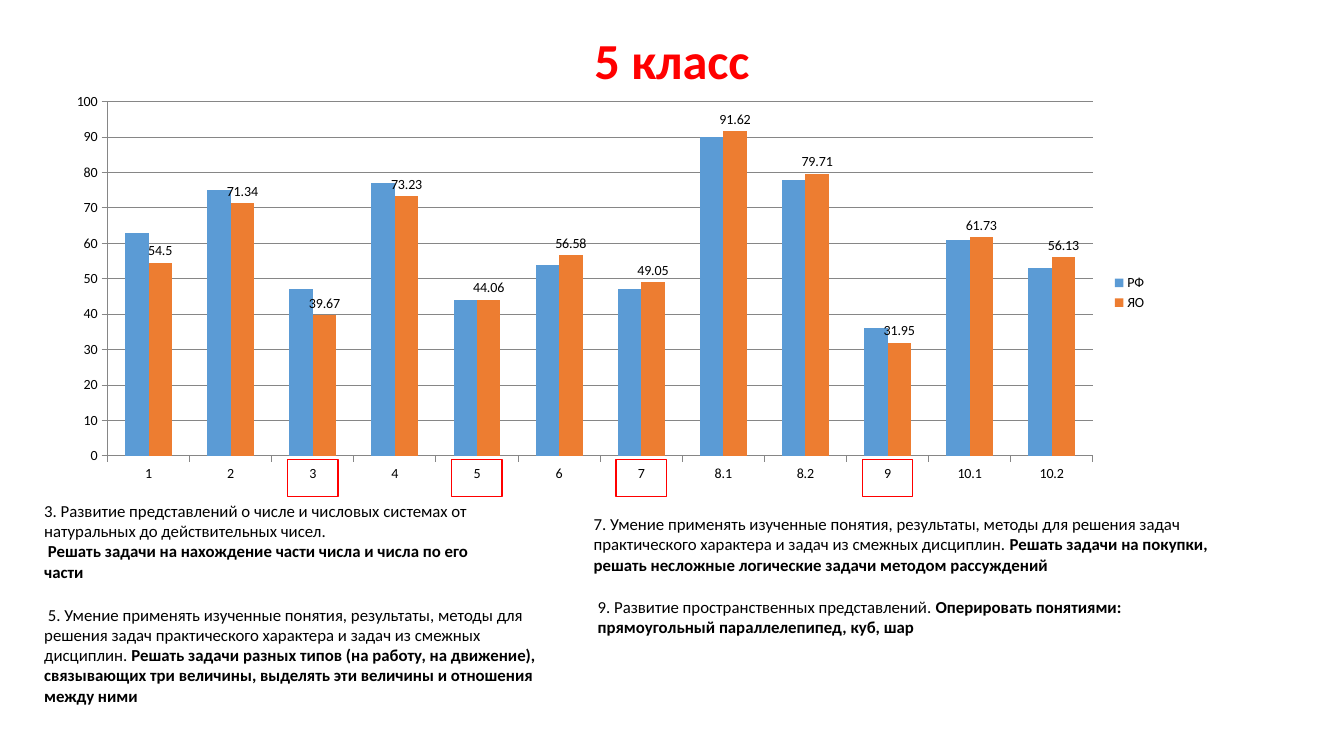
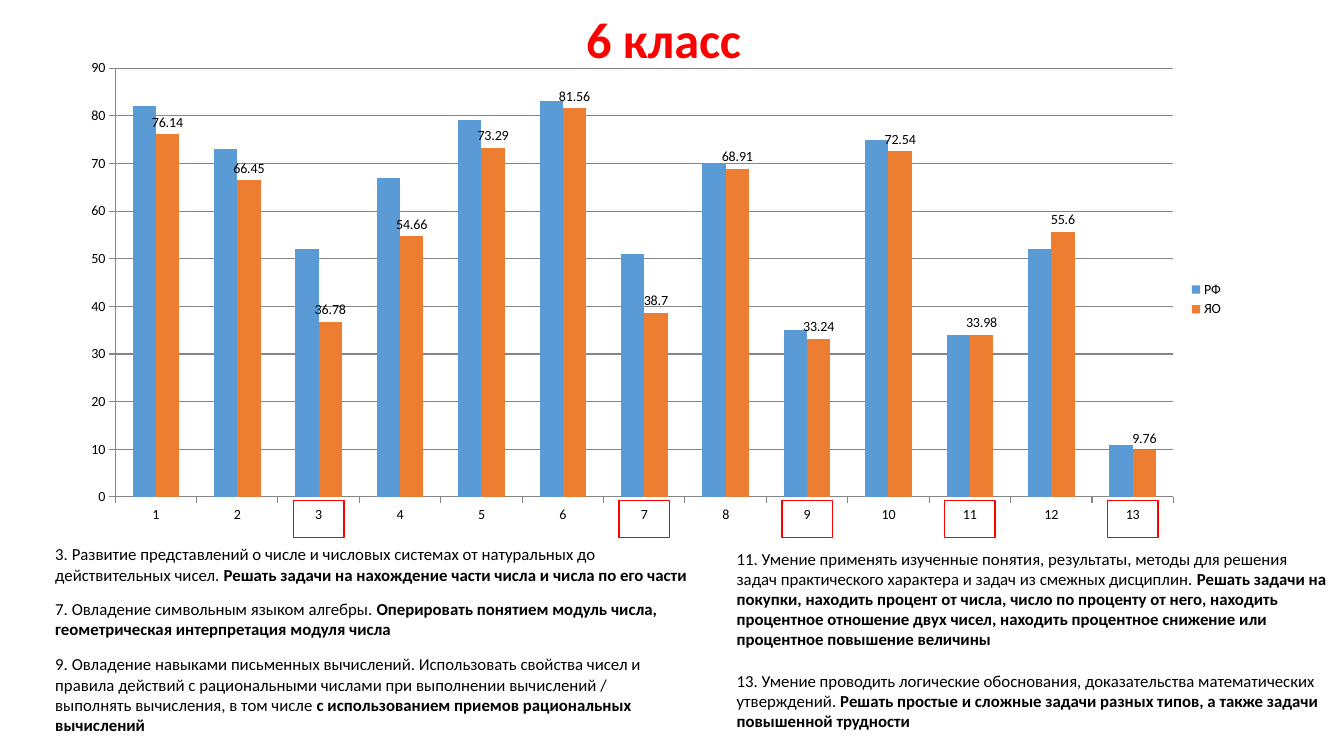
from dataclasses import dataclass

from lxml import etree
from pptx import Presentation
from pptx.chart.data import CategoryChartData
from pptx.dml.color import RGBColor
from pptx.enum.chart import XL_CHART_TYPE, XL_LABEL_POSITION, XL_LEGEND_POSITION, XL_TICK_MARK
from pptx.enum.shapes import MSO_SHAPE
from pptx.enum.text import MSO_ANCHOR, MSO_AUTO_SIZE, PP_ALIGN
from pptx.util import Pt

COLUMNS = XL_CHART_TYPE.COLUMN_CLUSTERED
LABEL_ABOVE = XL_LABEL_POSITION.OUTSIDE_END
LEGEND_RIGHT = XL_LEGEND_POSITION.RIGHT
TICK_OUT = XL_TICK_MARK.OUTSIDE
RECT = MSO_SHAPE.RECTANGLE
MIDDLE = MSO_ANCHOR.MIDDLE
FIT_SHAPE = MSO_AUTO_SIZE.SHAPE_TO_FIT_TEXT
NO_FIT = MSO_AUTO_SIZE.NONE
CENTER = PP_ALIGN.CENTER

FONT = "Calibri"
COLORS = {
    "accent": "FF0000",
    "text": "000000",
    "country": "5B9BD5",
    "region": "ED7D31",
    "grid": "868686",
}
TITLE_ONLY = 5
MARKER_W, MARKER_H, MARKER_GAP = 36, 26.6, 2.4
CHART_NS = "http://schemas.openxmlformats.org/drawingml/2006/chart"


@dataclass(frozen=True)
class Box:
    x: float
    y: float
    w: float
    h: float

    def inner(self, part: "Box") -> "Box":
        return Box(self.x + part.x * self.w, self.y + part.y * self.h,
                   part.w * self.w, part.h * self.h)

    def lengths(self) -> tuple[Pt, Pt, Pt, Pt]:
        return Pt(self.x), Pt(self.y), Pt(self.w), Pt(self.h)


@dataclass(frozen=True)
class Run:
    text: str
    bold: bool = False


@dataclass(frozen=True)
class Note:
    box: Box
    paragraphs: tuple[tuple[Run, ...], ...]


@dataclass(frozen=True)
class Grade:
    title: str
    title_box: Box
    chart_box: Box
    plot: Box
    cats: tuple[str, ...]
    country: tuple[float, ...]
    region: tuple[float, ...]
    marked: tuple[str, ...]
    notes: tuple[Note, ...]


def note(box: Box, skill: str, task: str) -> Note:
    return Note(box, ((Run(skill), Run(task, True)),))


GRADES = (
    Grade(
        "5 класс",
        Box(66, 12, 828, 66),
        Box(50.4, 67, 776, 283.7),
        Box(0.034, 0.018, 0.907, 0.894),
        ("1", "2", "3", "4", "5", "6", "7", "8.1", "8.2", "9", "10.1", "10.2"),
        (63, 75, 47, 77, 44, 54, 47, 90, 78, 36, 61, 53),
        (54.5, 71.34, 39.67, 73.23, 44.06, 56.58, 49.05, 91.62, 79.71, 31.95, 61.73, 56.13),
        ("3", "5", "7", "9"),
        (
            Note(Box(24.5, 354.2, 335.5, 65.5), (
                (Run("3. Развитие представлений о числе и числовых системах от "
                     "натуральных до действительных чисел."),),
                (Run(" "),
                 Run("Решать задачи на нахождение части числа и числа по его части", True)),
            )),
            note(Box(24.5, 428.4, 382.3, 80),
                 " 5. Умение применять изученные понятия, результаты, методы для решения задач "
                 "практического характера и задач из смежных дисциплин. ",
                 "Решать задачи разных типов (на работу, на движение), связывающих три величины, "
                 "выделять эти величины и отношения между ними"),
            note(Box(416.9, 363.6, 466.6, 51),
                 "7. Умение применять изученные понятия, результаты, методы для решения задач "
                 "практического характера и задач из смежных дисциплин. ",
                 "Решать задачи на покупки, решать несложные логические задачи методом рассуждений"),
            note(Box(419.8, 422.6, 474.5, 36),
                 "9. Развитие пространственных представлений. ",
                 "Оперировать понятиями: прямоугольный параллелепипед, куб, шар"),
        ),
    ),
    Grade(
        "6 класс",
        Box(60, 5, 828, 50.4),
        Box(53.3, 42.5, 828, 342.7),
        Box(0.035, 0.018, 0.913, 0.894),
        tuple(str(n) for n in range(1, 14)),
        (82, 73, 52, 67, 79, 83, 51, 70, 35, 75, 34, 52, 11),
        (76.14, 66.45, 36.78, 54.66, 73.29, 81.56, 38.7, 68.91, 33.24, 72.54, 33.98, 55.6, 9.76),
        ("3", "7", "9", "11", "13"),
        (
            note(Box(32.4, 385.2, 480.2, 36),
                 "3. Развитие представлений о числе и числовых системах от натуральных до "
                 "действительных чисел. ",
                 "Решать задачи на нахождение части числа и числа по его части"),
            note(Box(32.4, 424.1, 480.2, 36),
                 "7. Овладение символьным языком алгебры. ",
                 "Оперировать понятием модуль числа, геометрическая интерпретация модуля числа"),
            note(Box(32.4, 463.7, 441.4, 65.5),
                 "9. Овладение навыками письменных вычислений. Использовать свойства чисел и "
                 "правила действий с рациональными числами при выполнении вычислений / "
                 "выполнять вычисления, в том числе ",
                 "с использованием приемов рациональных вычислений"),
            note(Box(519.1, 388.1, 435.6, 80),
                 "11. Умение применять изученные понятия, результаты, методы для решения задач "
                 "практического характера и задач из смежных дисциплин. ",
                 "Решать задачи на покупки, находить процент от числа, число по проценту от него, "
                 "находить процентное отношение двух чисел, находить процентное снижение или "
                 "процентное повышение величины"),
            note(Box(519.1, 475.2, 435.6, 51),
                 "13. Умение проводить логические обоснования, доказательства математических "
                 "утверждений. ",
                 "Решать простые и сложные задачи разных типов, а также задачи повышенной трудности"),
        ),
    ),
)


def rgb(name: str) -> RGBColor:
    return RGBColor.from_string(COLORS[name])


def style_font(font, size: float, color: str = "text", bold: bool = False) -> None:
    font.name = FONT
    font.size = Pt(size)
    font.bold = bold
    font.color.rgb = rgb(color)


def add_title(slide, text: str, box: Box) -> None:
    sp = slide.shapes.title
    sp.left, sp.top, sp.width, sp.height = box.lengths()
    tf = sp.text_frame
    tf.auto_size = NO_FIT
    tf.vertical_anchor = MIDDLE
    p = tf.paragraphs[0]
    p.alignment = CENTER
    p.line_spacing = 0.9
    r = p.add_run()
    r.text = text
    style_font(r.font, 36, "accent", True)


def set_plot_layout(chart, plot: Box) -> None:
    area = chart._chartSpace.chart.plotArea
    for old in area.findall(f"{{{CHART_NS}}}layout"):
        area.remove(old)
    layout = etree.Element(f"{{{CHART_NS}}}layout")
    manual = etree.SubElement(layout, f"{{{CHART_NS}}}manualLayout")
    settings = (("layoutTarget", "inner"), ("xMode", "edge"), ("yMode", "edge"),
                ("x", plot.x), ("y", plot.y), ("w", plot.w), ("h", plot.h))
    for tag, value in settings:
        etree.SubElement(manual, f"{{{CHART_NS}}}{tag}").set("val", str(value))
    area.insert(0, layout)


def add_results_chart(slide, grade: Grade) -> None:
    data = CategoryChartData()
    data.categories = grade.cats
    data.add_series("РФ", grade.country)
    data.add_series("ЯО", grade.region)
    chart = slide.shapes.add_chart(COLUMNS, *grade.chart_box.lengths(), data).chart
    style_font(chart.font, 10)
    chart.has_title = False
    chart.has_legend = True
    chart.legend.position = LEGEND_RIGHT
    chart.legend.include_in_layout = False
    set_plot_layout(chart, grade.plot)

    for axis in (chart.category_axis, chart.value_axis):
        axis.major_tick_mark = TICK_OUT
        axis.format.line.color.rgb = rgb("grid")
    grid = chart.value_axis.major_gridlines.format.line
    grid.color.rgb = rgb("grid")
    grid.width = Pt(0.75)

    plot = chart.plots[0]
    plot.gap_width = 150
    plot.overlap = 0
    plot.vary_by_categories = False
    for series, color in zip(plot.series, ("country", "region")):
        series.format.fill.solid()
        series.format.fill.fore_color.rgb = rgb(color)
    labels = plot.series[1].data_labels
    labels.show_value = True
    labels.position = LABEL_ABOVE
    style_font(labels.font, 10)


def add_note(slide, item: Note) -> None:
    tf = slide.shapes.add_textbox(*item.box.lengths()).text_frame
    tf.word_wrap = True
    tf.auto_size = FIT_SHAPE
    for i, runs in enumerate(item.paragraphs):
        p = tf.add_paragraph() if i else tf.paragraphs[0]
        for run in runs:
            r = p.add_run()
            r.text = run.text
            style_font(r.font, 12, bold=run.bold)


def add_markers(slide, grade: Grade) -> None:
    area = grade.chart_box.inner(grade.plot)
    step = area.w / len(grade.cats)
    top = area.y + area.h + MARKER_GAP
    for cat in grade.marked:
        center = area.x + step * (grade.cats.index(cat) + 0.5)
        box = Box(center - MARKER_W / 2, top, MARKER_W, MARKER_H)
        sp = slide.shapes.add_shape(RECT, *box.lengths())
        sp.shadow.inherit = False
        sp.fill.background()
        sp.line.color.rgb = rgb("accent")
        sp.line.width = Pt(1)


def add_grade(prs, grade: Grade) -> None:
    slide = prs.slides.add_slide(prs.slide_layouts[TITLE_ONLY])
    add_title(slide, grade.title, grade.title_box)
    add_results_chart(slide, grade)
    for item in grade.notes:
        add_note(slide, item)
    add_markers(slide, grade)


def main() -> None:
    prs = Presentation()
    prs.slide_width, prs.slide_height = Pt(960), Pt(540)
    for grade in GRADES:
        add_grade(prs, grade)
    prs.save("out.pptx")


if __name__ == "__main__":
    main()
